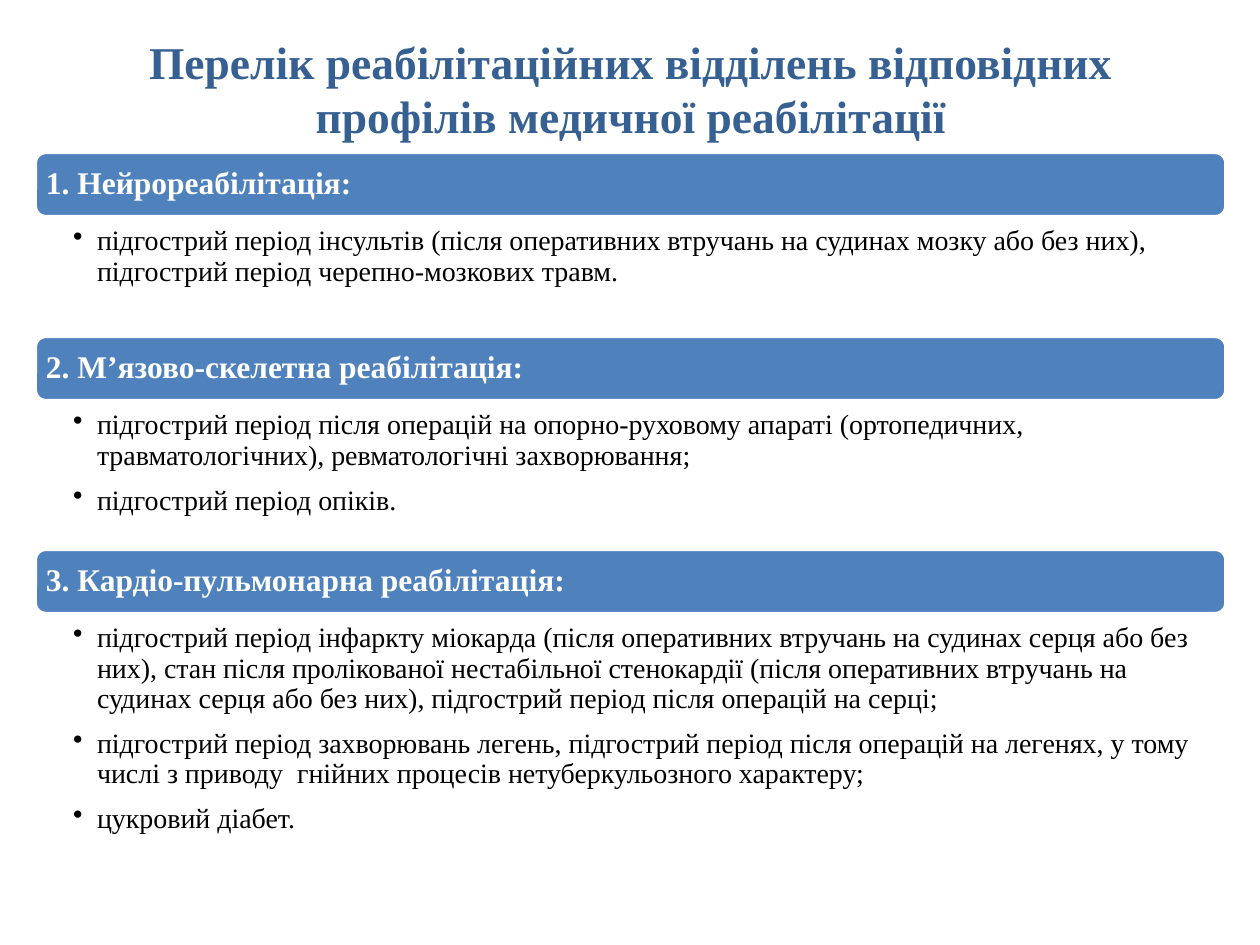
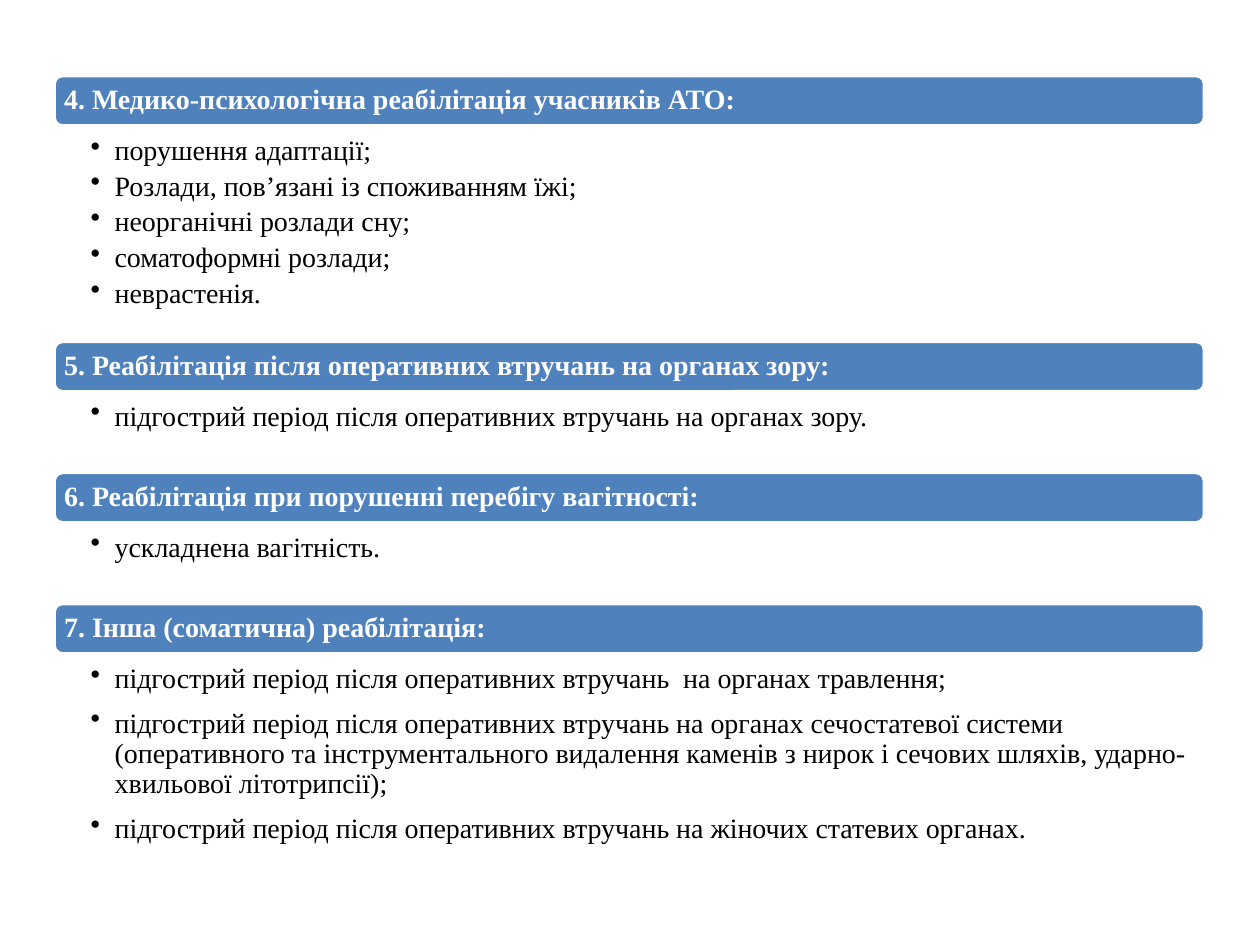
from lxml.etree import SubElement
from pptx import Presentation
from pptx.dml.color import RGBColor
from pptx.enum.shapes import MSO_SHAPE
from pptx.enum.text import MSO_ANCHOR, PP_ALIGN
from pptx.oxml.ns import qn
from pptx.util import Inches, Pt

FONT = "Times New Roman"
COLORS = {"title": "376092", "bar": "4F81BD", "white": "FFFFFF", "text": "000000"}
TITLE = "Перелік реабілітаційних відділень відповідних профілів медичної реабілітації"
BULLET_SIZE = 16
BULLET_INDENT = 0.19
TIGHT, LOOSE = 3.2, 8.4  # points between bullets

# Each section: heading, height of its list in inches, gap between bullets, bullets
SLIDES = [
    {
        "title": TITLE,
        "left": 0.28, "top": 1.21, "width": 9.45,
        "bar_height": 0.51, "heading_size": 18, "list_inset": 0.3,
        "sections": [
            ("1. Нейрореабілітація:", 0.95, LOOSE, [
                "підгострий період інсультів (після оперативних втручань на судинах мозку "
                "або без них), підгострий період черепно-мозкових травм.",
            ]),
            ("2. М’язово-скелетна реабілітація:", 1.18, LOOSE, [
                "підгострий період після операцій на опорно-руховому апараті (ортопедичних, "
                "травматологічних), ревматологічні захворювання;",
                "підгострий період опіків.",
            ]),
            ("3. Кардіо-пульмонарна реабілітація:", 2.29, LOOSE, [
                "підгострий період інфаркту міокарда (після оперативних втручань на судинах "
                "серця або без них), стан після пролікованої нестабільної стенокардії (після "
                "оперативних втручань на судинах серця або без них), підгострий період після "
                "операцій на серці;",
                "підгострий період захворювань легень, підгострий період після операцій на "
                "легенях, у тому числі з приводу  гнійних процесів нетуберкульозного характеру;",
                "цукровий діабет.",
            ]),
        ],
    },
    {
        "title": None,
        "left": 0.43, "top": 0.6, "width": 9.13,
        "bar_height": 0.4, "heading_size": 16, "list_inset": 0.29,
        "sections": [
            ("4. Медико-психологічна реабілітація учасників АТО:", 1.71, TIGHT, [
                "порушення адаптації;",
                "Розлади, пов’язані із споживанням їжі;",
                "неорганічні розлади сну;",
                "соматоформні розлади;",
                "неврастенія.",
            ]),
            ("5. Реабілітація після оперативних втручань на органах зору:", 0.64, LOOSE, [
                "підгострий період після оперативних втручань на органах зору.",
            ]),
            ("6. Реабілітація при порушенні перебігу вагітності:", 0.64, LOOSE, [
                "ускладнена вагітність.",
            ]),
            ("7. Інша (соматична) реабілітація:", 1.48, LOOSE, [
                "підгострий період після оперативних втручань  на органах травлення;",
                "підгострий період після оперативних втручань на органах сечостатевої системи "
                "(оперативного та інструментального видалення каменів з нирок і сечових шляхів, "
                "ударно-хвильової літотрипсії);",
                "підгострий період після оперативних втручань на жіночих статевих органах.",
            ]),
        ],
    },
]


def color(name):
    return RGBColor.from_string(COLORS[name])


def set_frame(frame, anchor, left, top, right, bottom):
    frame.word_wrap = True
    frame.vertical_anchor = anchor
    frame.margin_left, frame.margin_top = Inches(left), Inches(top)
    frame.margin_right, frame.margin_bottom = Inches(right), Inches(bottom)


def write(paragraph, text, size, color_name, bold=False):
    paragraph.text = text
    for run in paragraph.runs:
        run.font.name = FONT
        run.font.size = Pt(size)
        run.font.bold = bold
        run.font.color.rgb = color(color_name)


def add_bullet(paragraph):
    props = paragraph._p.get_or_add_pPr()
    props.set("marL", str(Inches(BULLET_INDENT)))
    props.set("indent", str(-Inches(BULLET_INDENT)))
    SubElement(props, qn("a:buChar")).set("char", "•")


def add_title(slide, text):
    title = slide.shapes.add_textbox(Inches(0.51), Inches(0.36), Inches(9), Inches(0.68))
    set_frame(title.text_frame, MSO_ANCHOR.MIDDLE, 0.1, 0.05, 0.1, 0.05)
    heading = title.text_frame.paragraphs[0]
    heading.alignment = PP_ALIGN.CENTER
    write(heading, text, 26, "title", bold=True)


def add_bar(slide, text, size, *box):
    bar = slide.shapes.add_shape(MSO_SHAPE.ROUNDED_RECTANGLE, *map(Inches, box))
    bar.shadow.inherit = False
    bar.fill.solid()
    bar.fill.fore_color.rgb = color("bar")
    bar.line.color.rgb = color("white")
    bar.line.width = Pt(2)
    set_frame(bar.text_frame, MSO_ANCHOR.MIDDLE, 0.06, 0.07, 0.06, 0.07)
    heading = bar.text_frame.paragraphs[0]
    heading.alignment = PP_ALIGN.LEFT
    heading.line_spacing = 0.9
    write(heading, text, size, "white", bold=True)


def add_list(slide, bullets, gap, inset, *box):
    frame = slide.shapes.add_textbox(*map(Inches, box)).text_frame
    set_frame(frame, MSO_ANCHOR.TOP, inset, 0.08, 0.03, 0.01)
    for index, text in enumerate(bullets):
        bullet = frame.add_paragraph() if index else frame.paragraphs[0]
        bullet.line_spacing = 0.9
        bullet.space_after = Pt(gap)
        write(bullet, text, BULLET_SIZE, "text")
        add_bullet(bullet)


def build_slide(deck, content):
    slide = deck.slides.add_slide(deck.slide_layouts[6])
    if content["title"]:
        add_title(slide, content["title"])
    left, top, width = content["left"], content["top"], content["width"]
    bar_height = content["bar_height"]
    for heading, list_height, gap, bullets in content["sections"]:
        add_bar(slide, heading, content["heading_size"], left, top, width, bar_height)
        top += bar_height
        add_list(slide, bullets, gap, content["list_inset"], left, top, width, list_height)
        top += list_height


def main():
    deck = Presentation()
    deck.slide_width, deck.slide_height = Inches(10), Inches(7.5)
    for content in SLIDES:
        build_slide(deck, content)
    deck.save("out.pptx")


if __name__ == "__main__":
    main()
